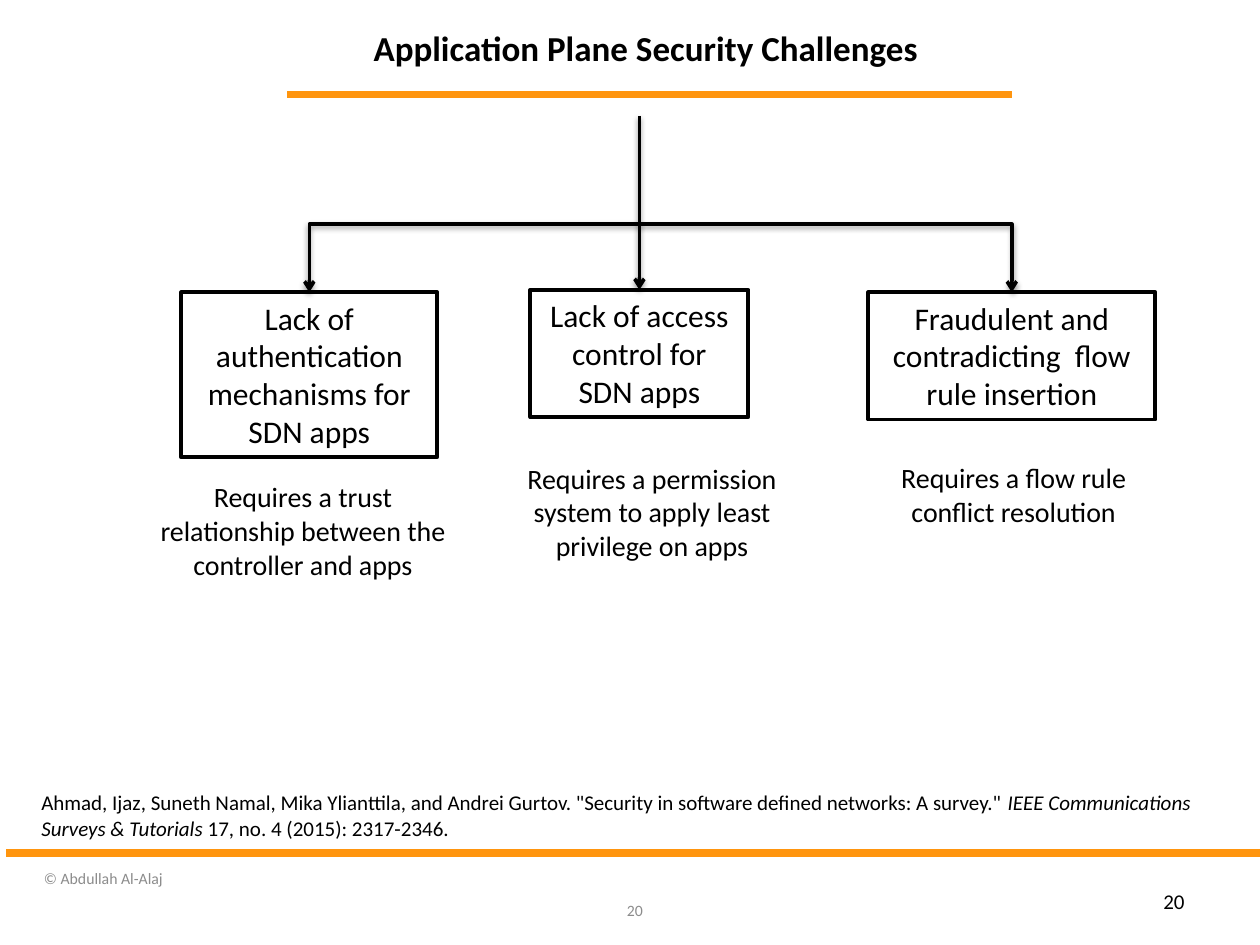
from lxml import etree
from pptx import Presentation
from pptx.dml.color import RGBColor
from pptx.enum.shapes import MSO_CONNECTOR as Link, MSO_SHAPE as Shape
from pptx.enum.text import MSO_ANCHOR as Anchor, PP_ALIGN as Align
from pptx.oxml import parse_xml
from pptx.oxml.ns import nsdecls, qn
from pptx.util import Inches, Pt

COLORS = {"ink": "000000", "rule": "FF950E", "muted": "8C8C8C"}
CHALLENGES = [
    ("Lack of authentication mechanisms for SDN apps", (1.44, 2.32, 2.03, 1.31),
     "Requires a trust relationship between the\ncontroller and apps", (1.08, 3.76, 2.65, 0.91)),
    ("Lack of access control for SDN apps", (4.21, 2.3, 1.73, 1.01),
     "Requires a permission system to apply least privilege on apps", (3.85, 3.61, 2.65, 0.91)),
    ("Fraudulent and contradicting  flow rule insertion", (6.89, 2.32, 2.28, 1.01),
     "Requires a flow rule conflict resolution", (6.72, 3.61, 2.65, 0.64)),
]
CITATION = [
    ("Ahmad, Ijaz, Suneth Namal, Mika Ylianttila, and Andrei Gurtov. "
     "\"Security in software defined networks: A survey.\" ", False),
    ("IEEE Communications Surveys & Tutorials", True),
    (" 17, no. 4 (2015): 2317-2346.", False),
]


def rgb(name):
    """Return the palette colour of that name."""
    return RGBColor.from_string(COLORS[name])


def style_text(frame, size, align, color="ink", bold=False, anchor=Anchor.TOP):
    """Wrap, align and format all text of a frame."""
    frame.word_wrap = True
    frame.vertical_anchor = anchor
    for paragraph in frame.paragraphs:
        paragraph.alignment = align
        for run in paragraph.runs:
            run.font.name = "Calibri"
            run.font.size = Pt(size)
            run.font.bold = bold
            run.font.color.rgb = rgb(color)


def add_label(slide, box, text, size, align, **style):
    """Add a text box with one text style."""
    label = slide.shapes.add_textbox(*map(Inches, box))
    label.text_frame.text = text
    style_text(label.text_frame, size, align, **style)


def add_line(slide, start, end, color, width, kind=Link.STRAIGHT):
    """Add a connector with an empty effect list."""
    line = slide.shapes.add_connector(kind, *map(Inches, (*start, *end)))
    line.line.color.rgb = rgb(color)
    line.line.width = Pt(width)
    etree.SubElement(line._element.spPr, qn("a:effectLst"))
    return line


def add_arrow(slide, start, end, kind=Link.STRAIGHT):
    """Add a softly shadowed arrow, with a single bend if it is an elbow."""
    arrow = add_line(slide, start, end, "ink", 2, kind)
    properties = arrow._element.spPr
    etree.SubElement(properties.find(qn("a:ln")), qn("a:tailEnd"), type="arrow")
    properties.find(qn("a:effectLst")).append(parse_xml(
        f'<a:outerShdw {nsdecls("a")} blurRad="{Pt(3.1)}" dist="{Pt(1.6)}" dir="5400000" rotWithShape="0">'
        f'<a:srgbClr val="{COLORS["ink"]}"><a:alpha val="38000"/></a:srgbClr></a:outerShdw>'))
    if kind == Link.ELBOW:
        properties.find(qn("a:prstGeom")).set("prst", "bentConnector2")
    return arrow


def add_challenge(slide, box, text):
    """Add an outlined challenge box."""
    challenge = slide.shapes.add_shape(Shape.RECTANGLE, *map(Inches, box))
    challenge.shadow.inherit = False
    challenge.fill.background()
    challenge.line.color.rgb = rgb("ink")
    challenge.line.width = Pt(2.25)
    challenge.text_frame.text = text
    style_text(challenge.text_frame, 18, Align.CENTER)
    return challenge


def add_header(slide, box):
    """Add the title and the rule along its lower edge."""
    left, top, width, height = box
    add_line(slide, (2.28, top + height), (8.03, top + height), "rule", 4.31)
    add_label(slide, box, "Application Plane Security Challenges", 20, Align.CENTER,
              bold=True, anchor=Anchor.MIDDLE)


def add_tree(slide, trunk_top, branch_y):
    """Add the challenges with their remedies, and the arrows branching to them."""
    boxes = []
    for challenge, box, remedy, remedy_box in CHALLENGES:
        boxes.append(add_challenge(slide, box, challenge))
        add_label(slide, remedy_box, remedy, 16, Align.CENTER)
    tops = [(left + width / 2, top) for _, (left, top, width, _), _, _ in CHALLENGES]
    trunk_x = tops[1][0]
    for side in (0, 2):
        add_arrow(slide, (trunk_x, branch_y), tops[side], Link.ELBOW)
    trunk = add_arrow(slide, (trunk_x, trunk_top), tops[1])
    trunk.end_connect(boxes[1], 0)


def add_citation(slide, box):
    """Add the reference with its journal name in italics."""
    frame = slide.shapes.add_textbox(*map(Inches, box)).text_frame
    for text, italic in CITATION:
        run = frame.paragraphs[0].add_run()
        run.text = text
        run.font.italic = italic
    style_text(frame, 12, Align.LEFT)


def add_footer(slide, left, top, right):
    """Add the footer rule, the copyright line and the page numbers."""
    add_line(slide, (left, top), (right, top), "rule", 4.31)
    add_label(slide, (left + 0.2, top + 0.02, 2.75, 0.36), "© Abdullah Al-Alaj", 9, Align.LEFT,
              color="muted", anchor=Anchor.MIDDLE)
    add_label(slide, (4.8, top + 0.33, 0.4, 0.4), "20", 9, Align.RIGHT, color="muted")
    add_label(slide, (right - 2.83, top + 0.18, 2.33, 0.4), "20", 12, Align.RIGHT, anchor=Anchor.MIDDLE)


def main():
    """Build and save the slide."""
    deck = Presentation()
    deck.slide_width, deck.slide_height = Inches(10), Inches(7.5)
    slide = deck.slides.add_slide(deck.slide_layouts[6])
    add_header(slide, (1.75, 0, 6.75, 0.75))
    add_tree(slide, 0.92, 1.78)
    add_citation(slide, (0.23, 6.22, 9.63, 0.5))
    add_footer(slide, 0.05, 6.77, 10)
    deck.save("out.pptx")


if __name__ == "__main__":
    main()
